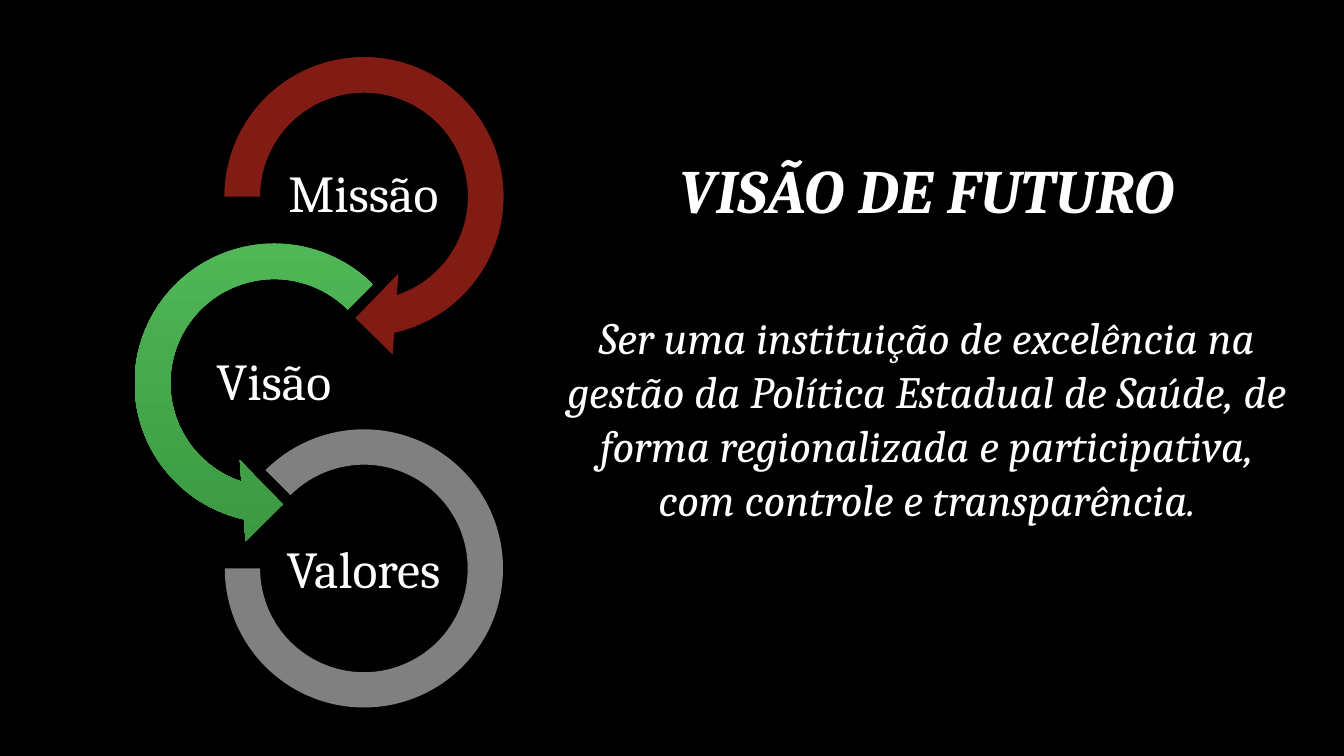
from pptx import Presentation
from pptx.dml.color import RGBColor
from pptx.enum.shapes import MSO_SHAPE as SHAPE
from pptx.enum.text import MSO_ANCHOR as ANCHOR, PP_ALIGN as ALIGN
from pptx.util import Inches, Pt

COLORS = {
    "background": "000000",
    "text": "FFFFFF",
    "mission": "801C14",
    "vision_top": "51B958",
    "vision_bottom": "3B9942",
    "values": "808080",
}


def rgb(name):
    return RGBColor.from_string(COLORS[name])


class Deck:
    font = "Cambria"

    def __init__(self, width, height):
        self.prs = Presentation()
        self.prs.slide_width = Inches(width)
        self.prs.slide_height = Inches(height)
        self.slide = self.prs.slides.add_slide(self.prs.slide_layouts[6])
        fill = self.slide.background.fill
        fill.solid()
        fill.fore_color.rgb = rgb("background")

    def ring(self, kind, left, top, size, adjustments, colors):
        sp = self.slide.shapes.add_shape(
            kind, Inches(left), Inches(top), Inches(size), Inches(size))
        for i, value in enumerate(adjustments):
            sp.adjustments[i] = value
        sp.shadow.inherit = False
        sp.line.fill.background()
        if len(colors) == 1:
            sp.fill.solid()
            sp.fill.fore_color.rgb = rgb(colors[0])
        else:
            sp.fill.gradient()
            sp.fill.gradient_angle = 270
            for stop, color in zip(sp.fill.gradient_stops, colors):
                stop.color.rgb = rgb(color)

    def text(self, left, top, width, height, paragraphs, size,
             anchor=ANCHOR.TOP, margin=None, spacing=None, italic=False):
        box = self.slide.shapes.add_textbox(
            Inches(left), Inches(top), Inches(width), Inches(height))
        tf = box.text_frame
        tf.word_wrap = True
        tf.vertical_anchor = anchor
        if margin is not None:
            tf.margin_left = tf.margin_right = Inches(margin)
            tf.margin_top = tf.margin_bottom = Inches(margin)
        tf.text = "\n".join(paragraphs)
        for p in tf.paragraphs:
            p.alignment = ALIGN.CENTER
            p.line_spacing = spacing
            for r in p.runs:
                r.font.name = self.font
                r.font.size = Pt(size)
                r.font.italic = italic
                r.font.color.rgb = rgb("text")
        return tf


def main():
    deck = Deck(13.33, 7.5)

    tf = deck.text(5.39, 1.35, 7.61, 4.29, [
        "VISÃO DE FUTURO",
        "Ser uma instituição de excelência na gestão da Política Estadual "
        "de Saúde, de forma regionalizada e participativa,",
        "com controle e transparência.",
    ], 32, italic=True)
    title = tf.paragraphs[0]
    title.line_spacing = 1.15
    title.space_after = Pt(60)
    title.runs[0].font.size = Pt(44)
    title.runs[0].font.bold = True

    rings = [
        ("Missão", 2.71, SHAPE.CIRCULAR_ARROW, 2, 0.34, 3.22,
         (0.11, 11.42, 45, 108, 0.125), ["mission"]),
        ("Visão", 1.82, SHAPE.LEFT_CIRCULAR_ARROW, 1.11, 2.19, 3.22,
         (0.11, 11.42, 63, 189, 0.125), ["vision_top", "vision_bottom"]),
        ("Valores", 2.71, SHAPE.BLOCK_ARC, 2.23, 4.26, 2.76,
         (135, 108, 0.127), ["values"]),
    ]
    for i, (label, label_left, *ring) in enumerate(rings):
        deck.ring(*ring)
        deck.text(label_left, 1.5 + 1.865 * i, 1.79, 0.89, [label], 37,
                  anchor=ANCHOR.MIDDLE, margin=0.03, spacing=0.9)

    deck.prs.save("out.pptx")


if __name__ == "__main__":
    main()
